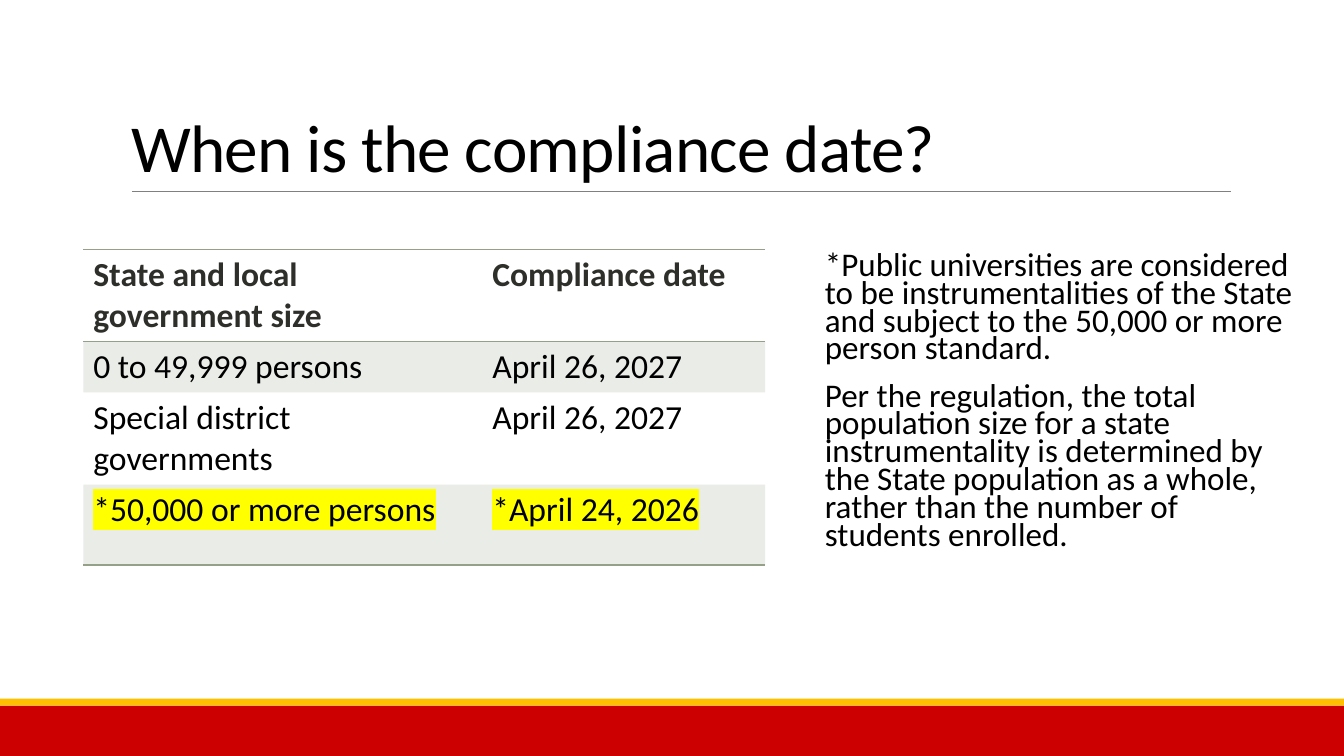
from lxml.etree import SubElement
from pptx import Presentation
from pptx.dml.color import RGBColor
from pptx.enum.shapes import MSO_CONNECTOR as Connector, MSO_SHAPE as Shape
from pptx.enum.text import MSO_ANCHOR as Anchor, MSO_AUTO_SIZE as AutoSize, PP_ALIGN as Align
from pptx.oxml import parse_xml
from pptx.oxml.ns import nsdecls, qn
from pptx.util import Pt

PLAIN_TABLE = "{2D5ABB26-0587-4C30-8999-92F81FD0307C}"


def rgb(value):
    return RGBColor.from_string(value)


def write(paragraph, text, size=24, color="000000", bold=False, spacing=None, highlight=None):
    run = paragraph.add_run()
    run.text = text
    font = run.font
    font.name, font.size, font.bold = "Calibri", Pt(size), bold
    font.color.rgb = rgb(color)
    props = run._r.get_or_add_rPr()
    if spacing is not None:
        props.set("spc", str(round(spacing * 100)))
    if highlight:
        mark = parse_xml(f'<a:highlight {nsdecls("a")}><a:srgbClr val="{highlight}"/></a:highlight>')
        props.find(qn("a:solidFill")).addnext(mark)


class ComplianceSlide:
    ink, heading, sage = "000000", "2E2E2A", "94A088"
    red, gold, gray, orange, yellow = "CC0000", "FFC000", "808080", "E48312", "FFFF00"

    def __init__(self, deck):
        self.slide = deck.slides.add_slide(deck.slide_layouts[1])

    def band(self, left, top, width, height, color):
        band = self.slide.shapes.add_shape(Shape.RECTANGLE, Pt(left), Pt(top), Pt(width), Pt(height))
        band.shadow.inherit = False
        band.fill.solid()
        band.fill.fore_color.rgb = rgb(color)
        band.line.fill.background()

    def rule(self, left, right, y):
        rule = self.slide.shapes.add_connector(Connector.STRAIGHT, Pt(left), Pt(y), Pt(right), Pt(y))
        rule.line.color.rgb = rgb(self.gray)
        rule.line.width = Pt(0.5)
        SubElement(rule._element.spPr, qn("a:effectLst"))

    def place(self, holder, left, top, width, height, anchor):
        holder.left, holder.top, holder.width, holder.height = map(Pt, (left, top, width, height))
        frame = holder.text_frame
        frame.word_wrap, frame.auto_size = True, AutoSize.NONE
        frame.vertical_anchor = anchor
        return frame

    def title(self, text, *box):
        frame = self.place(self.slide.shapes.title, *box, Anchor.BOTTOM)
        line = frame.paragraphs[0]
        line.alignment, line.line_spacing = Align.LEFT, 0.85
        write(line, text, size=48, color=self.ink, spacing=-0.5)

    def body(self, remarks, *box):
        frame = self.place(self.slide.placeholders[1], *box, Anchor.TOP)
        frame.margin_left = frame.margin_right = 0
        for i, remark in enumerate(remarks):
            line = frame.add_paragraph() if i else frame.paragraphs[0]
            line.line_spacing, line.space_before, line.space_after = 0.7, Pt(12), Pt(2)
            props = line._p.get_or_add_pPr()
            props.set("marL", str(Pt(7.2)))
            props.set("indent", str(-Pt(7.2)))
            color = SubElement(props, qn("a:buClr"))
            SubElement(color, qn("a:srgbClr"), val=self.orange)
            SubElement(props, qn("a:buChar"), char=" ")
            write(line, remark, size=23.6, color=self.ink)

    def border(self, cell, sides):
        props = cell._tc.get_or_add_tcPr()
        for i, side in enumerate(sides):
            props.insert(i, parse_xml(
                f'<a:ln{side} {nsdecls("a")} w="{Pt(1)}"><a:solidFill>'
                f'<a:srgbClr val="{self.sage}"/></a:solidFill></a:ln{side}>'))

    def shade(self, cell):
        cell.fill.solid()
        cell.fill.fore_color.rgb = rgb(self.sage)
        color = cell._tc.tcPr.find(qn("a:solidFill")).find(qn("a:srgbClr"))
        SubElement(color, qn("a:alpha"), val="20000")

    def table(self, rows, left, top, widths, heights):
        grid = self.slide.shapes.add_table(len(rows), len(widths), Pt(left), Pt(top),
                                           Pt(sum(widths)), Pt(sum(heights))).table
        grid.horz_banding = False
        grid._tbl.tblPr.find(qn("a:tableStyleId")).text = PLAIN_TABLE
        for column, width in zip(grid.columns, widths):
            column.width = Pt(width)
        last = len(rows) - 1
        for r, (row, height) in enumerate(zip(rows, heights)):
            grid.rows[r].height = Pt(height)
            for c, text in enumerate(row):
                cell = grid.cell(r, c)
                if r % 2:
                    self.shade(cell)
                else:
                    cell.fill.background()
                self.border(cell, "TB" if r == 0 else "B" if r == last else "")
                write(cell.text_frame.paragraphs[0], text, bold=r == 0,
                      color=self.ink if r else self.heading,
                      highlight=self.yellow if r == last else None)


def main():
    deck = Presentation()
    deck.slide_width, deck.slide_height = Pt(960), Pt(540)
    page = ComplianceSlide(deck)

    # Footer bands and title rule
    page.band(0, 504, 960, 36, page.red)
    page.band(0, 499, 960, 5, page.gold)
    page.rule(94.3, 879, 136.8)

    # Title
    page.title("When is the compliance date?", 86.4, 22.3, 792, 114.5)

    # Compliance dates
    dates = [
        ("State and local government size", "Compliance date"),
        ("0 to 49,999 persons", "April 26, 2027"),
        ("Special district governments", "April 26, 2027"),
        ("*50,000 or more persons", "*April 24, 2026"),
    ]
    page.table(dates, 59.5, 178, widths=(285, 202), heights=(60.5, 34, 60.5, 57.5))

    # Remarks on universities
    page.body([
        "*Public universities are considered to be instrumentalities of the State "
        "and subject to the 50,000 or more person standard.",
        "Per the regulation, the total population size for a state instrumentality is determined "
        "by the State population as a whole, rather than the number of students enrolled.",
    ], 582, 178, 342, 253.5)

    deck.save("out.pptx")


if __name__ == "__main__":
    main()
